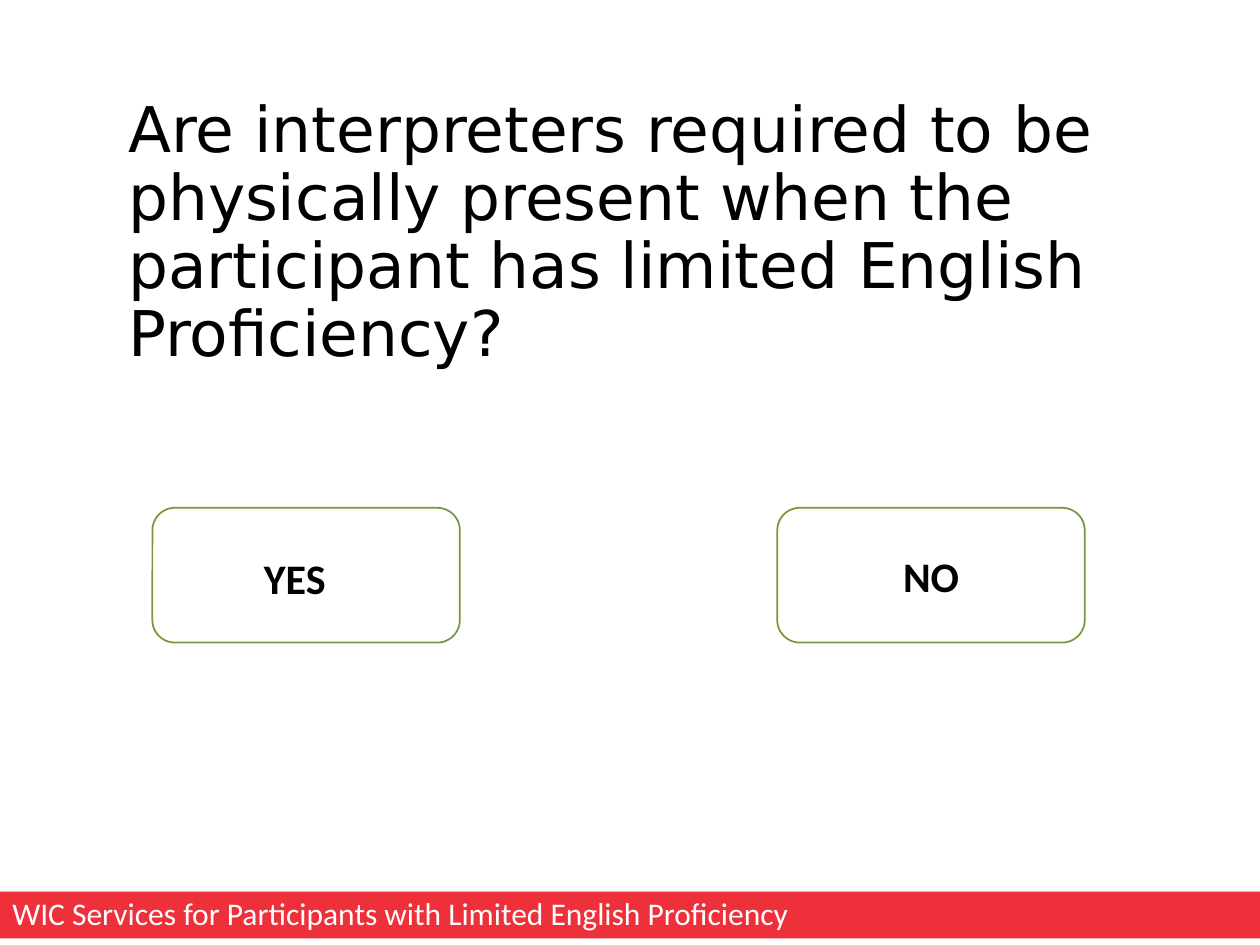
from dataclasses import dataclass

from pptx import Presentation
from pptx.dml.color import RGBColor
from pptx.enum.shapes import MSO_SHAPE
from pptx.enum.text import MSO_ANCHOR, PP_ALIGN
from pptx.shapes.autoshape import Shape
from pptx.slide import Slide
from pptx.util import Pt

COLORS = {"text": "000000", "paper": "FFFFFF", "border": "77983F", "banner": "EE303A"}


@dataclass
class Box:
    left: float
    top: float
    width: float
    height: float

    def lengths(self) -> list[Pt]:
        return [Pt(v) for v in (self.left, self.top, self.width, self.height)]


@dataclass
class Answer:
    label: str
    button: Box
    caption: Box


BUTTON_TOP, BUTTON_WIDTH, BUTTON_HEIGHT = 290.2, 175.7, 77
CAPTION_WIDTH, CAPTION_HEIGHT = 162.7, 36

ANSWERS = [
    Answer(label,
           Box(left, BUTTON_TOP, BUTTON_WIDTH, BUTTON_HEIGHT),
           Box(caption_left, caption_top, CAPTION_WIDTH, CAPTION_HEIGHT))
    for label, left, caption_left, caption_top in (
        ("YES", 87.1, 87.1, 312),
        ("NO", 444.2, 450.7, 311),
    )
]


def color(name: str) -> RGBColor:
    return RGBColor.from_string(COLORS[name])


def write(shape: Shape, text: str, anchor: MSO_ANCHOR, font: dict, spacing: dict) -> None:
    """Put one paragraph in the shape, with the given font and paragraph formats."""
    frame = shape.text_frame
    frame.word_wrap = True
    frame.vertical_anchor = anchor
    paragraph = frame.paragraphs[0]
    for name, value in spacing.items():
        setattr(paragraph, name, value)
    run = paragraph.add_run()
    run.text = text
    formats = {"name": "Calibri"} | font
    run.font.color.rgb = color(formats.pop("color"))
    for name, value in formats.items():
        setattr(run.font, name, value)


def add_panel(slide: Slide, kind: MSO_SHAPE, box: Box, fill: str) -> Shape:
    panel = slide.shapes.add_shape(kind, *box.lengths())
    panel.shadow.inherit = False
    panel.fill.solid()
    panel.fill.fore_color.rgb = color(fill)
    panel.line.fill.background()
    return panel


def add_question(slide: Slide) -> None:
    question = slide.shapes.add_textbox(*Box(66.2, 13.7, 588.2, 240.5).lengths())
    write(question,
          "Are interpreters required to be physically present when the "
          "participant has limited English Proficiency?",
          MSO_ANCHOR.MIDDLE,
          {"name": "DejaVu Sans", "size": Pt(36), "color": "text"},
          {"alignment": PP_ALIGN.LEFT, "line_spacing": 0.9, "space_before": Pt(10)})


def add_answer(slide: Slide, answer: Answer) -> None:
    button = add_panel(slide, MSO_SHAPE.ROUNDED_RECTANGLE, answer.button, "paper")
    button.line.color.rgb = color("border")
    button.line.width = Pt(1)
    caption = slide.shapes.add_textbox(*answer.caption.lengths())
    write(caption, answer.label, MSO_ANCHOR.MIDDLE,
          {"size": Pt(24), "bold": True, "color": "text"},
          {"alignment": PP_ALIGN.CENTER})


def add_banner(slide: Slide) -> None:
    banner = add_panel(slide, MSO_SHAPE.RECTANGLE, Box(0, 509.5, 720, 26.8), "banner")
    write(banner, "WIC Services for Participants with Limited English Proficiency",
          MSO_ANCHOR.TOP,
          {"size": Pt(18), "color": "paper"},
          {"alignment": PP_ALIGN.LEFT, "line_spacing": 0.9, "space_after": Pt(6)})


def main() -> None:
    presentation = Presentation()
    presentation.slide_width, presentation.slide_height = Pt(720), Pt(540)
    slide = presentation.slides.add_slide(presentation.slide_layouts[6])
    add_question(slide)
    for answer in ANSWERS:
        add_answer(slide, answer)
    add_banner(slide)
    presentation.save("out.pptx")


if __name__ == "__main__":
    main()
